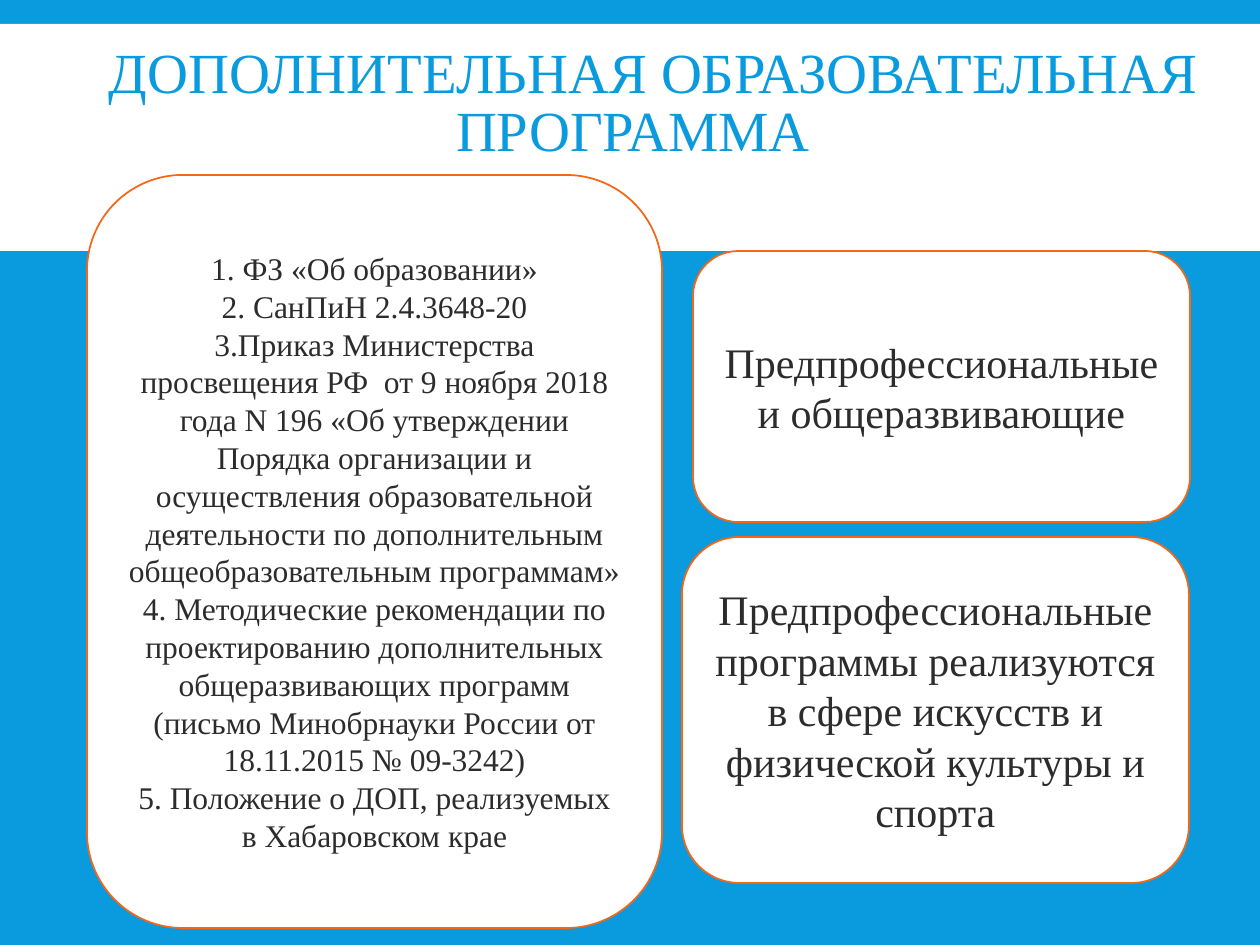
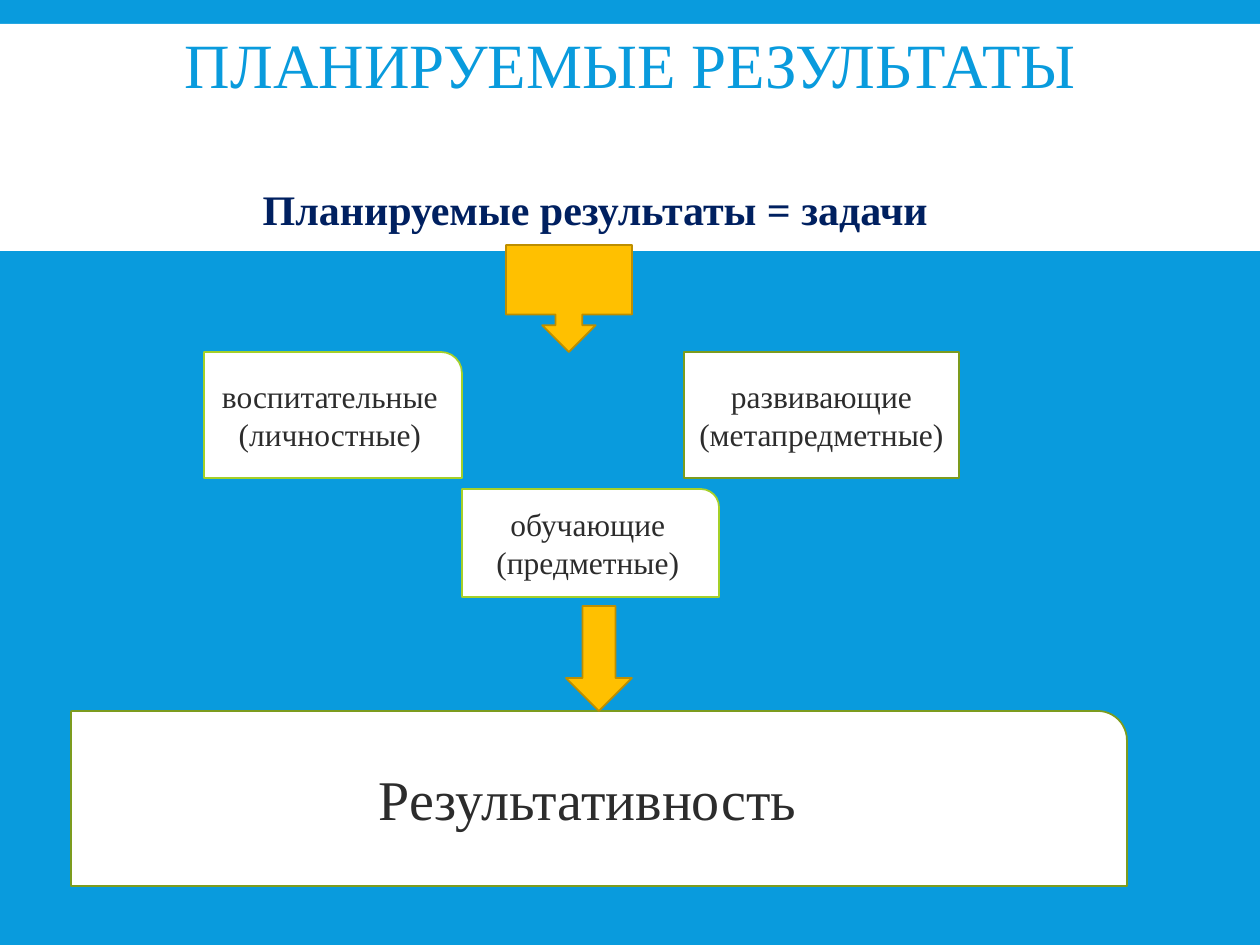
from pptx import Presentation
from pptx.dml.color import RGBColor
from pptx.enum.shapes import MSO_SHAPE
from pptx.enum.text import MSO_ANCHOR, MSO_AUTO_SIZE, PP_ALIGN
from pptx.oxml.ns import qn
from pptx.util import Inches, Pt

RECTANGLE = MSO_SHAPE.RECTANGLE
ROUND_CORNER = MSO_SHAPE.ROUND_1_RECTANGLE
CARD = MSO_SHAPE.FLOWCHART_ALTERNATE_PROCESS
CALLOUT = MSO_SHAPE.DOWN_ARROW_CALLOUT
ARROW = MSO_SHAPE.DOWN_ARROW
CENTER = PP_ALIGN.CENTER
MIDDLE = MSO_ANCHOR.MIDDLE
NO_FIT = MSO_AUTO_SIZE.NONE

FONT = "Times New Roman"
BLUE, WHITE, INK, NAVY = "099BDD", "FFFFFF", "2C2C2C", "002060"
ORANGE, LIME, OLIVE = "F56617", "A5D028", "7C9C1E"
GOLD, DARK_GOLD = "FFC000", "BD8E00"

PX_PER_INCH = 126
TITLE_ONLY, TITLE_AND_BODY = 5, 1
PAGE_WIDTH = 1260


def px(length):
    return round(length * 914400 / PX_PER_INCH)


def color(value):
    return RGBColor.from_string(value)


def write(shape, *lines, size=18, fill=INK, bold=False, spacing=None, indent=0):
    """Fill a shape with centred paragraphs, one for each line."""
    frame = shape.text_frame
    frame.word_wrap = True
    frame.vertical_anchor = MIDDLE
    for index, line in enumerate(lines):
        para = frame.add_paragraph() if index else frame.paragraphs[0]
        para.alignment = CENTER
        if spacing:
            para.line_spacing = spacing
        if indent:
            para._p.get_or_add_pPr().set("indent", str(px(indent)))
        span = para.add_run()
        span.text = line
        span.font.name = FONT
        span.font.size = Pt(size)
        span.font.bold = bold
        span.font.color.rgb = color(fill)


def add_block(page, kind, box, fill=WHITE, line=None):
    block = page.shapes.add_shape(kind, *map(px, box))
    block.shadow.inherit = False
    block.fill.solid()
    block.fill.fore_color.rgb = color(fill)
    if line:
        block.line.color.rgb = color(line)
        block.line.width = Pt(1)
    else:
        block.line.fill.background()
    return block


def place(holder, box):
    holder.left, holder.top, holder.width, holder.height = map(px, box)
    frame = holder.text_frame
    frame.auto_size = NO_FIT
    frame.margin_top = frame.margin_bottom = 0


def add_title(page, text, box, **style):
    place(page.shapes.title, box)
    write(page.shapes.title, text, fill=BLUE, spacing=0.85, **style)


def add_lead(page, text, box):
    """Put one bold line without a bullet into the body placeholder."""
    body = page.placeholders[1]
    place(body, box)
    para = body.text_frame.paragraphs[0]
    properties = para._p.get_or_add_pPr()
    properties.set("marL", "0")
    properties.set("indent", "0")
    properties.append(properties.makeelement(qn("a:buNone"), {}))
    para.space_before = Pt(0)
    write(body, text, size=24, fill=NAVY, bold=True, spacing=0.9)


def style_master(deck, page):
    """Give all slides the blue background and the white title band."""
    master = deck.slide_master
    master.background.fill.solid()
    master.background.fill.fore_color.rgb = color(BLUE)
    band = add_block(page, RECTANGLE, (0, 24, PAGE_WIDTH, 227))
    band.element.nvSpPr.cNvPr.set("id", "99")
    master.shapes.element.insert(2, band.element)


def build_program(page):
    add_title(page, "ДОПОЛНИТЕЛЬНАЯ ОБРАЗОВАТЕЛЬНАЯ ПРОГРАММА",
              (15, 45, 1236, 121), size=32.4, indent=40)
    cards = [
        ((693, 251, 497, 271), 24, ["Предпрофессиональные и общеразвивающие"]),
        ((682, 537, 507, 346), 24, [
            "Предпрофессиональные программы реализуются в сфере искусств "
            "и физической культуры и спорта"]),
        ((87, 175, 575, 753), 18, [
            "1. ФЗ «Об образовании»",
            "2. СанПиН 2.4.3648-20",
            "3.Приказ Министерства просвещения РФ  от 9 ноября 2018 года N 196 "
            "«Об утверждении Порядка организации и осуществления образовательной "
            "деятельности по дополнительным общеобразовательным программам»",
            "4. Методические рекомендации по проектированию дополнительных "
            "общеразвивающих программ (письмо Минобрнауки России от 18.11.2015 "
            "№ 09-3242)",
            "5. Положение о ДОП, реализуемых в Хабаровском крае"]),
    ]
    for box, size, lines in cards:
        write(add_block(page, CARD, box, line=ORANGE), *lines, size=size)


def build_results(page):
    add_title(page, "ПЛАНИРУЕМЫЕ РЕЗУЛЬТАТЫ", (2, 9, 1257, 120), size=36)
    add_lead(page, "Планируемые результаты = задачи ", (113, 185, 975, 54))
    blocks = [
        (ROUND_CORNER, (204, 352, 258, 126), LIME, 18,
         ["воспитательные (личностные)"]),
        (RECTANGLE, (684, 352, 275, 126), OLIVE, 18,
         ["развивающие", "(метапредметные)"]),
        (ROUND_CORNER, (462, 489, 257, 108), LIME, 18,
         ["обучающие (предметные)"]),
        (ROUND_CORNER, (71, 711, 1056, 175), OLIVE, 32, ["Результативность "]),
    ]
    for kind, box, line, size, lines in blocks:
        write(add_block(page, kind, box, line=line), *lines, size=size)
    for kind, box in [(CALLOUT, (506, 245, 126, 107)), (ARROW, (566, 606, 66, 105))]:
        add_block(page, kind, box, fill=GOLD, line=DARK_GOLD)


def main():
    deck = Presentation()
    deck.slide_width, deck.slide_height = Inches(10), Inches(7.5)
    program = deck.slides.add_slide(deck.slide_layouts[TITLE_ONLY])
    style_master(deck, program)
    build_program(program)
    build_results(deck.slides.add_slide(deck.slide_layouts[TITLE_AND_BODY]))
    deck.save("out.pptx")


if __name__ == "__main__":
    main()
